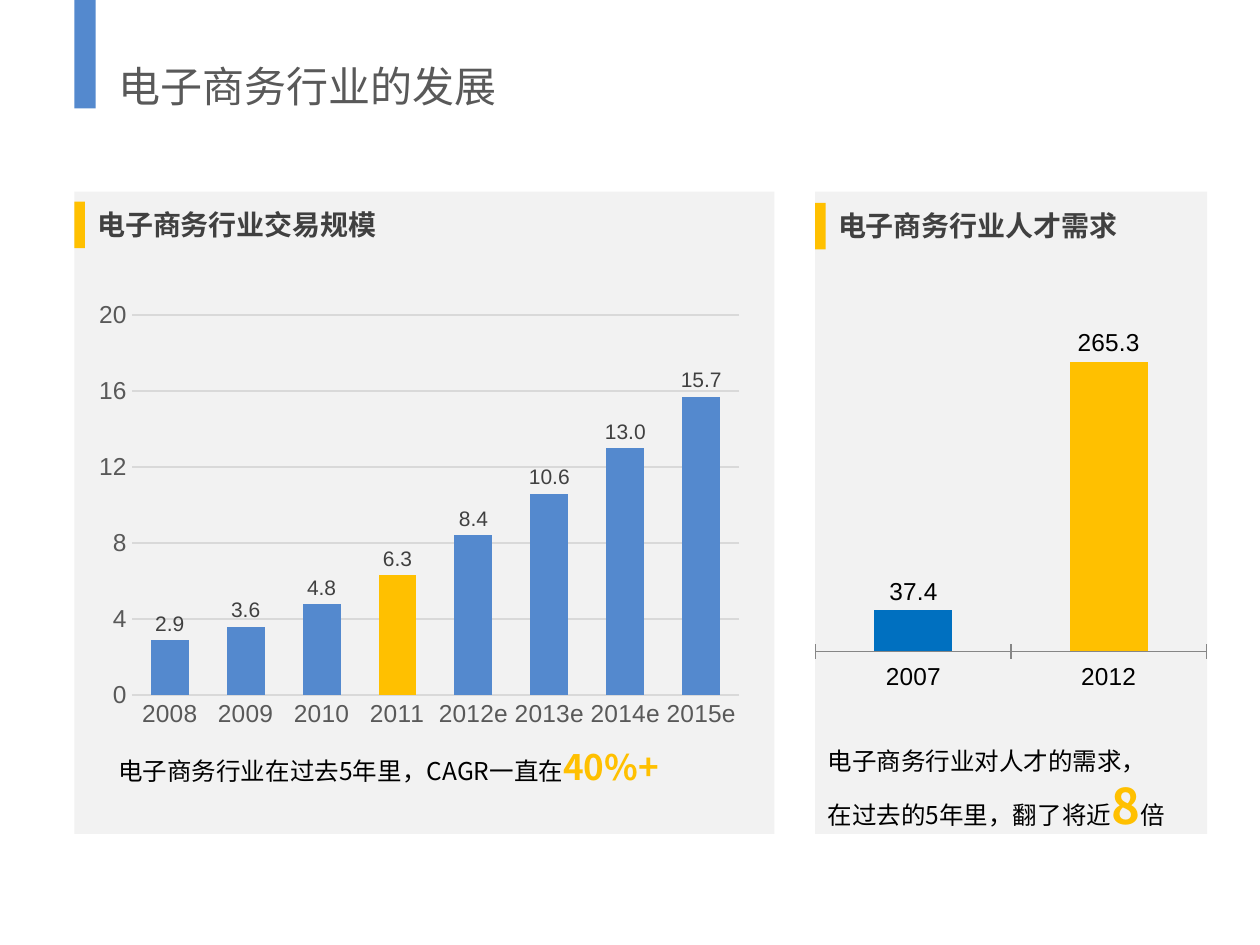
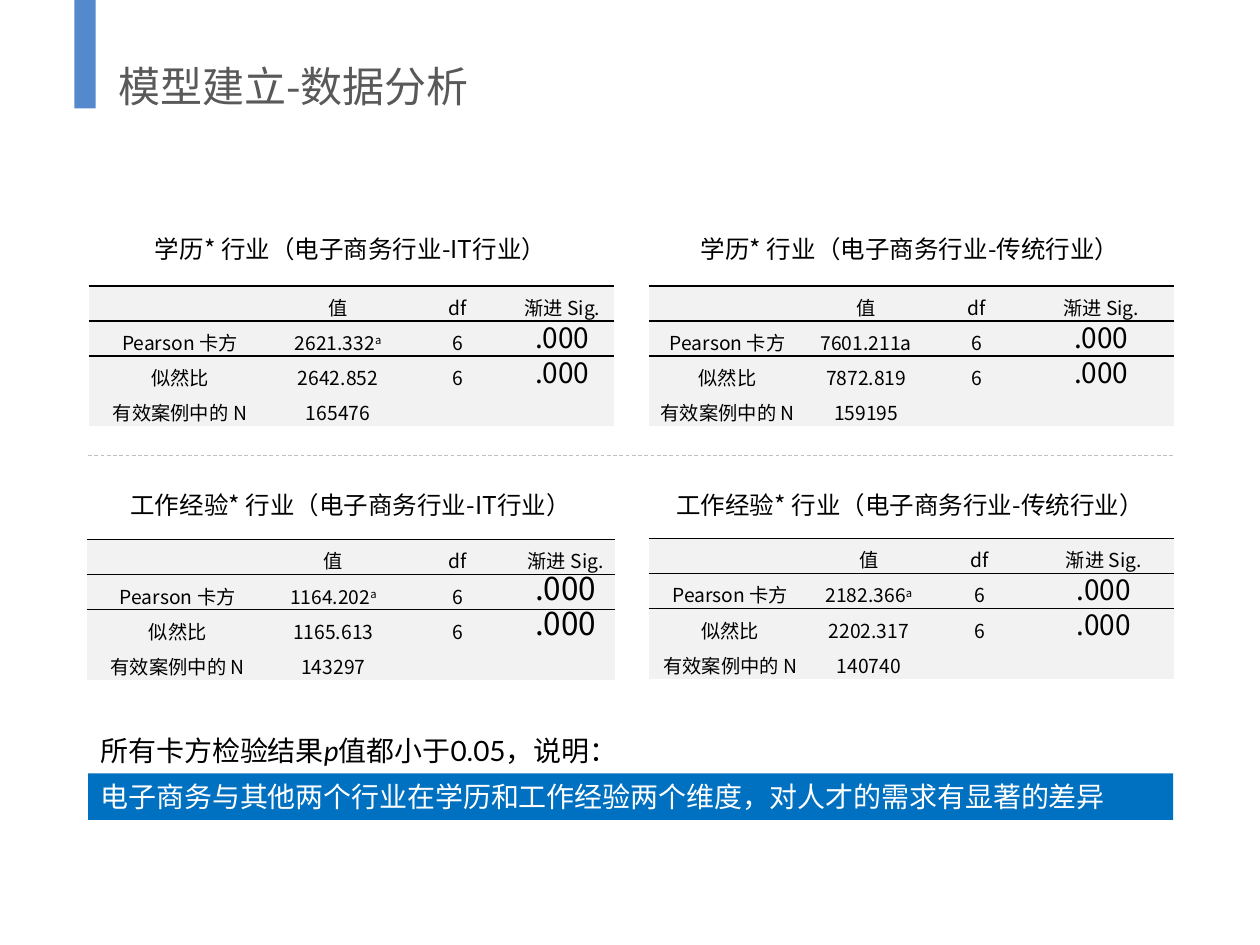
from typing import NamedTuple

from pptx import Presentation
from pptx.chart.data import CategoryChartData
from pptx.dml.color import RGBColor
from pptx.enum.chart import XL_CHART_TYPE, XL_LABEL_POSITION, XL_TICK_MARK
from pptx.enum.dml import MSO_LINE
from pptx.enum.shapes import MSO_CONNECTOR, MSO_SHAPE
from pptx.enum.text import MSO_ANCHOR, MSO_AUTO_SIZE, PP_ALIGN
from pptx.oxml import parse_xml
from pptx.oxml.ns import nsdecls, qn
from pptx.util import Pt

BLUE, DEEP_BLUE, GOLD = "5489CE", "0070C0", "FFC000"
PANEL, RULE, BLACK, WHITE = "F2F2F2", "D9D9D9", "000000", "FFFFFF"
TITLE_GREY, HEADING_GREY = "595959", "404040"
SANS, NOTE_FONT, LATIN, CHART_FONT = "Noto Sans CJK SC", "Noto Sans CJK JP", "Lato", "Arial"
NO_GRID_STYLE = "{2D5ABB26-0587-4C30-8999-92F81FD0307C}"
ROW_HEIGHT = 20


class Box(NamedTuple):
    left: float
    top: float
    width: float
    height: float

    def lengths(self) -> list:
        return [Pt(value) for value in self]


class Piece(NamedTuple):
    text: str
    size: float
    color: str = BLACK
    bold: bool = False
    italic: bool = False
    raised: bool = False


class Panel(NamedTuple):
    heading: str
    box: Box
    heading_top: float


class Analysis(NamedTuple):
    title: str
    title_left: float
    title_top: float
    table_left: float
    table_top: float
    columns: tuple
    pearson: str
    mark: str
    likelihood: str
    cases: str
    significance_size: float = 16
    indent: float = 3


PANELS = (
    Panel("电子商务行业交易规模", Box(42.5, 109.5, 400, 367), 115.2),
    Panel("电子商务行业人才需求", Box(465.8, 109.5, 224, 367), 115.9),
)

ANALYSES = (
    Analysis("学历* 行业（电子商务行业-IT行业）", 50.4, 130.3, 50.6, 163.4,
             (101.5, 79.2, 57.6, 61.9), "2621.332", "a", "2642.852", "165476"),
    Analysis("学历* 行业（电子商务行业-传统行业）", 370.1, 130.3, 370.8, 163.4,
             (90, 68.4, 58.3, 83.5), "7601.211a", "", "7872.819", "159195", indent=0),
    Analysis("工作经验* 行业（电子商务行业-IT行业）", 50.4, 276.5, 49.7, 308.2,
             (100.8, 77, 64.8, 59), "1164.202", "a", "1165.613", "143297", 18),
    Analysis("工作经验* 行业（电子商务行业-传统行业）", 370.1, 276.5, 370.8, 307.6,
             (90, 68.4, 58.3, 83.5), "2182.366", "a", "2202.317", "140740"),
)


def rgb(color: str) -> RGBColor:
    return RGBColor.from_string(color)


def paint(part, color: str) -> None:
    part.fill.solid()
    part.fill.fore_color.rgb = rgb(color)


def style_font(font, size: float, color: str) -> None:
    font.name = CHART_FONT
    font.size = Pt(size)
    font.color.rgb = rgb(color)


def write(paragraph, pieces: list, typeface: str) -> None:
    for piece in pieces:
        run = paragraph.add_run()
        run.text = piece.text
        font = run.font
        font.name = typeface
        font.size = Pt(piece.size)
        font.color.rgb = rgb(piece.color)
        font.bold = piece.bold
        font.italic = piece.italic
        properties = font._element
        properties.find(qn("a:latin")).addnext(
            parse_xml(f'<a:ea {nsdecls("a")} typeface="{typeface}"/>'))
        if piece.raised:
            properties.set("baseline", "30000")


def fill_frame(frame, lines: list, typeface: str, alignment) -> None:
    frame.word_wrap = True
    frame.auto_size = MSO_AUTO_SIZE.SHAPE_TO_FIT_TEXT
    for index, pieces in enumerate(lines):
        paragraph = frame.add_paragraph() if index else frame.paragraphs[0]
        paragraph.alignment = alignment
        write(paragraph, pieces, typeface)


def add_text(slide, box: Box, lines: list, typeface: str = SANS, alignment=PP_ALIGN.LEFT) -> None:
    text_box = slide.shapes.add_textbox(*box.lengths())
    fill_frame(text_box.text_frame, lines, typeface, alignment)


def add_block(slide, box: Box, color: str):
    shape = slide.shapes.add_shape(MSO_SHAPE.RECTANGLE, *box.lengths())
    shape.shadow.inherit = False
    paint(shape, color)
    shape.line.fill.background()
    return shape


def add_titled_slide(presentation, title: str):
    slide = presentation.slides.add_slide(presentation.slide_layouts[6])
    add_block(slide, Box(42.5, 0, 12.2, 62), BLUE)
    add_text(slide, Box(60.5, 31, 363, 36), [[Piece(title, 24, TITLE_GREY)]])
    return slide


def add_panel(slide, panel: Panel) -> None:
    left = panel.box.left
    add_block(slide, panel.box, PANEL)
    add_block(slide, Box(left, panel.heading_top, 6, 26.6), GOLD)
    add_text(slide, Box(left + 6, panel.heading_top, 214, 26.6),
             [[Piece(panel.heading, 16, HEADING_GREY, bold=True)]])


def add_column_chart(slide, box: Box, values: dict, color: str, accent: tuple,
                     label_size: float, label_color: str, axis_color: str, top_value: float):
    data = CategoryChartData()
    data.categories = list(values)
    data.add_series("Series 1", list(values.values()))
    chart = slide.shapes.add_chart(
        XL_CHART_TYPE.COLUMN_CLUSTERED, *box.lengths(), data).chart
    chart.has_legend = False
    chart.has_title = False
    style_font(chart.font, 14, BLACK)
    plot = chart.plots[0]
    plot.vary_by_categories = False
    series = plot.series[0]
    series.invert_if_negative = False
    paint(series.format, color)
    accent_index, accent_color = accent
    paint(series.points[accent_index].format, accent_color)
    plot.has_data_labels = True
    labels = plot.data_labels
    labels.show_value = True
    labels.position = XL_LABEL_POSITION.OUTSIDE_END
    labels.number_format = "0.0"
    labels.number_format_is_linked = False
    style_font(labels.font, label_size, label_color)
    style_font(chart.category_axis.tick_labels.font, 14, axis_color)
    chart.value_axis.minimum_scale = 0
    chart.value_axis.maximum_scale = top_value
    return chart


def add_volume_chart(slide) -> None:
    volumes = {"2008": 2.9, "2009": 3.6, "2010": 4.8, "2011": 6.3,
               "2012e": 8.4, "2013e": 10.6, "2014e": 13, "2015e": 15.7}
    chart = add_column_chart(slide, Box(49, 167, 381, 254), volumes, BLUE, (3, GOLD),
                             12, HEADING_GREY, TITLE_GREY, 20)
    chart.plots[0].gap_width = 100
    chart.plots[0].overlap = -24
    category_axis, value_axis = chart.category_axis, chart.value_axis
    for axis in (category_axis, value_axis):
        axis.major_tick_mark = XL_TICK_MARK.NONE
    category_axis.format.line.color.rgb = rgb(RULE)
    category_axis.format.line.width = Pt(1)
    value_axis.major_unit = 4
    value_axis.format.line.fill.background()
    value_axis.tick_labels.number_format = "0"
    value_axis.tick_labels.number_format_is_linked = False
    style_font(value_axis.tick_labels.font, 14, TITLE_GREY)
    grid_line = value_axis.major_gridlines.format.line
    grid_line.color.rgb = rgb(RULE)
    grid_line.width = Pt(0.75)


def add_talent_chart(slide) -> None:
    chart = add_column_chart(slide, Box(465.8, 185, 224, 288), {"2007": 37.4, "2012": 265.3},
                             GOLD, (0, DEEP_BLUE), 14, BLACK, BLACK, 300)
    chart.plots[0].gap_width = 150
    chart.value_axis.has_major_gridlines = False
    chart.value_axis.visible = False
    chart.category_axis.major_tick_mark = XL_TICK_MARK.CROSS
    chart.category_axis.format.line.color.rgb = rgb("868686")
    plot_area = chart._chartSpace.chart.plotArea
    for layout in plot_area.findall(qn("c:layout")):
        plot_area.remove(layout)
    sides = "".join(f'<c:{name} val="{value}"/>' for name, value in (
        ("layoutTarget", "inner"), ("xMode", "edge"), ("yMode", "edge"),
        ("x", 0), ("y", 0), ("w", 1), ("h", 0.65)))
    plot_area.insert(0, parse_xml(
        f'<c:layout {nsdecls("c")}><c:manualLayout>{sides}</c:manualLayout></c:layout>'))


def add_cell_border(cell, side: str) -> None:
    cell._tc.get_or_add_tcPr().append(parse_xml(
        f'<a:{side} {nsdecls("a")} w="12700"><a:solidFill><a:srgbClr val="{BLACK}"/>'
        f'</a:solidFill></a:{side}>'))


def add_analysis(slide, analysis: Analysis) -> None:
    add_text(slide, Box(analysis.title_left, analysis.title_top, 300, 24.2),
             [[Piece(analysis.title, 14)]], alignment=PP_ALIGN.CENTER)
    rows = (
        ("", "值", "df", "渐进 Sig."),
        ("Pearson 卡方", analysis.pearson, "6", ".000"),
        ("似然比", analysis.likelihood, "6", ".000"),
        ("有效案例中的 N", analysis.cases, "", ""),
    )
    box = Box(analysis.table_left, analysis.table_top,
              sum(analysis.columns), ROW_HEIGHT * len(rows))
    table = slide.shapes.add_table(len(rows), len(analysis.columns), *box.lengths()).table
    table._tbl.tblPr.find(qn("a:tableStyleId")).text = NO_GRID_STYLE
    for column, width in zip(table.columns, analysis.columns):
        column.width = Pt(width)
    for row_index, row in enumerate(rows):
        table.rows[row_index].height = Pt(ROW_HEIGHT)
        for column_index, text in enumerate(row):
            cell = table.cell(row_index, column_index)
            cell.margin_left = cell.margin_right = cell.margin_top = cell.margin_bottom = 0
            cell.vertical_anchor = MSO_ANCHOR.MIDDLE
            if row_index == 0:
                add_cell_border(cell, "lnT")
                add_cell_border(cell, "lnB")
            elif row_index == 1:
                add_cell_border(cell, "lnT")
            paint(cell, PANEL)
            paragraph = cell.text_frame.paragraphs[0]
            paragraph.alignment = PP_ALIGN.CENTER
            paragraph.line_spacing = Pt(ROW_HEIGHT)
            paragraph._p.get_or_add_pPr().set("marL", str(Pt(analysis.indent)))
            paragraph.font.size = Pt(11)
            pieces = [Piece(text, analysis.significance_size if text == ".000" else 11)]
            if analysis.mark and (row_index, column_index) == (1, 1):
                pieces.append(Piece(analysis.mark, 11, raised=True))
            if text:
                write(paragraph, pieces, SANS)


def add_divider(slide) -> None:
    connector = slide.shapes.add_connector(
        MSO_CONNECTOR.STRAIGHT, Pt(50.4), Pt(260), Pt(670.3), Pt(260))
    connector.line.color.rgb = rgb("BFBFBF")
    connector.line.width = Pt(0.5)
    connector.line.dash_style = MSO_LINE.DASH
    connector._element.spPr.append(parse_xml(f'<a:effectLst {nsdecls("a")}/>'))


def build_growth_slide(presentation) -> None:
    slide = add_titled_slide(presentation, "电子商务行业的发展")
    for panel in PANELS:
        add_panel(slide, panel)
    add_volume_chart(slide)
    add_talent_chart(slide)
    add_text(slide, Box(60.5, 422.6, 348.5, 31.5),
             [[Piece("电子商务行业在过去5年里，CAGR一直在", 14),
               Piece("40%+", 20, GOLD, bold=True)]], NOTE_FONT)
    add_text(slide, Box(465.8, 422.6, 252, 58.3),
             [[Piece("电子商务行业对人才的需求，", 14)],
              [Piece("在过去的5年里，翻了将近", 14), Piece("8", 28, GOLD, bold=True),
               Piece("倍", 14)]], NOTE_FONT)


def build_analysis_slide(presentation) -> None:
    slide = add_titled_slide(presentation, "模型建立-数据分析")
    for analysis in ANALYSES:
        add_analysis(slide, analysis)
    add_divider(slide)
    add_text(slide, Box(50.4, 415.4, 536.4, 26.6),
             [[Piece("所有卡方检验结果", 16), Piece("p", 16, italic=True),
               Piece("值都小于0.05，说明：", 16)]], LATIN)
    conclusion = add_block(slide, Box(50.4, 442, 620, 26.6), DEEP_BLUE)
    fill_frame(conclusion.text_frame, [[Piece(
        "电子商务与其他两个行业在学历和工作经验两个维度，对人才的需求有显著的差异",
        16, WHITE)]], LATIN, PP_ALIGN.LEFT)


def main() -> None:
    presentation = Presentation()
    presentation.slide_width = Pt(720)
    presentation.slide_height = Pt(540)
    build_growth_slide(presentation)
    build_analysis_slide(presentation)
    presentation.save("out.pptx")


if __name__ == "__main__":
    main()
